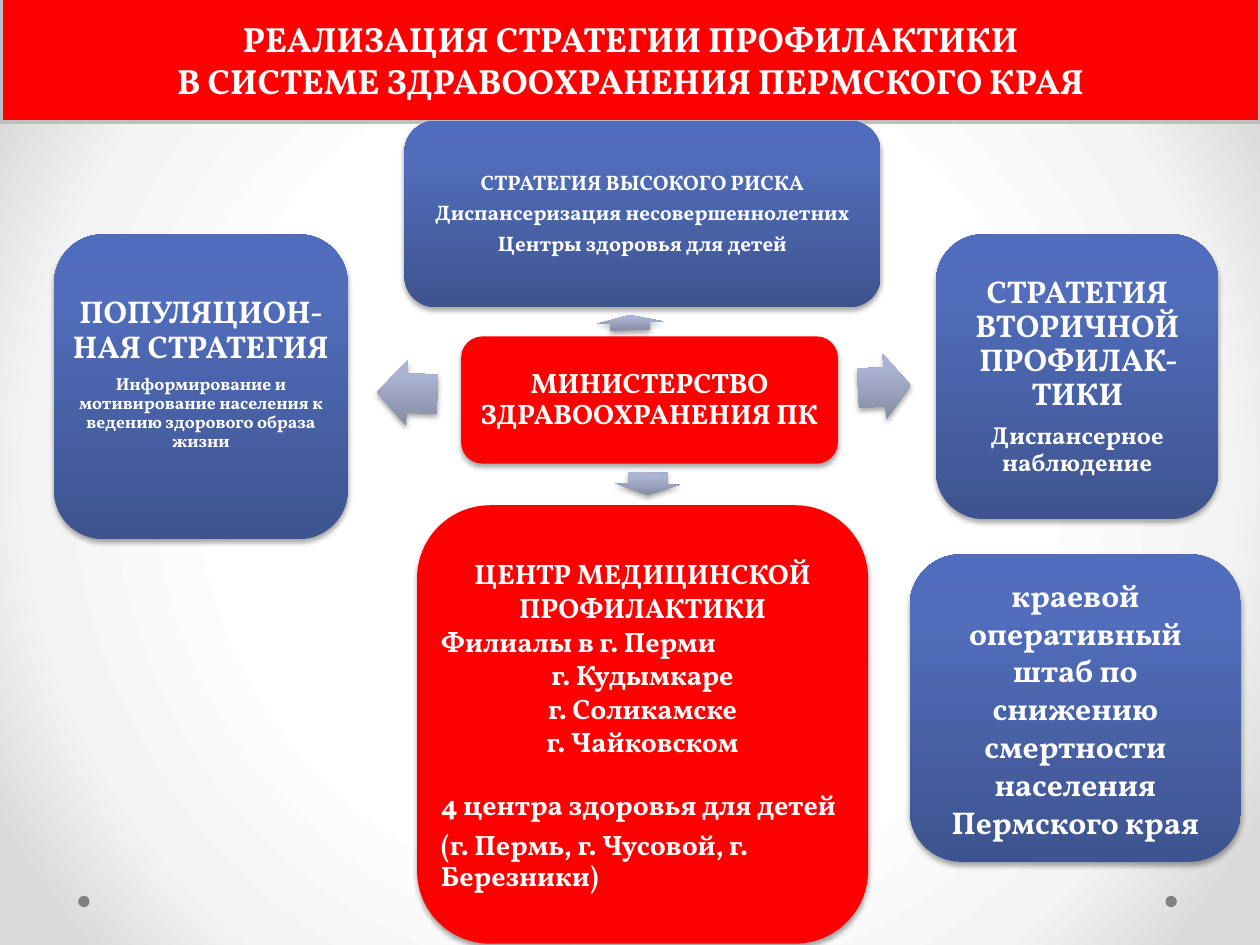
from dataclasses import dataclass

import lxml.etree
import pptx
import pptx.dml.color
import pptx.enum.shapes
import pptx.enum.text
import pptx.oxml
import pptx.oxml.ns
import pptx.util

RGBColor = pptx.dml.color.RGBColor
SHAPE = pptx.enum.shapes.MSO_SHAPE
ALIGN = pptx.enum.text.PP_ALIGN
qn = pptx.oxml.ns.qn

RED = RGBColor(0xFF, 0x00, 0x00)
WHITE = RGBColor(0xFF, 0xFF, 0xFF)
SILVER = RGBColor(0xBF, 0xBF, 0xBF)
GREY = RGBColor(0x80, 0x80, 0x80)
BLACK = RGBColor(0x00, 0x00, 0x00)
BLUES = ((0, RGBColor(0x3E, 0x54, 0x90)), (80, RGBColor(0x51, 0x6D, 0xBB)),
         (100, RGBColor(0x4F, 0x6C, 0xBE)))
STEELS = ((0, RGBColor(0x85, 0x8B, 0xA3)), (80, RGBColor(0xAC, 0xB4, 0xD4)),
          (100, RGBColor(0xAC, 0xB5, 0xD6)))
BACKDROP = ((50, WHITE), (76, RGBColor(0xF4, 0xF4, 0xF4)),
            (92, RGBColor(0xDA, 0xDA, 0xDA)))

FONT = "Vollkorn"
COLS, ROWS = 100, 75
WIDTH, HEIGHT = pptx.util.Inches(10), pptx.util.Inches(7.5)
A_NS = 'xmlns:a="http://schemas.openxmlformats.org/drawingml/2006/main"'
UPWARD = '<a:lin ang="16200000" scaled="0"/>'
RADIAL = ('<a:path path="circle"><a:fillToRect l="50000" t="50000" '
          'r="50000" b="50000"/></a:path>')


@dataclass(frozen=True)
class Box:
    col: float
    row: float
    cols: float
    rows: float


@dataclass(frozen=True)
class Line:
    text: str
    size: float
    tight: bool = True
    align: ALIGN = ALIGN.CENTER
    before: float = 0


@dataclass(frozen=True)
class Card:
    box: Box
    fill: RGBColor | tuple
    lines: tuple[Line, ...]
    insets: tuple[float, float, float, float] = (0.2, 0.2, 0.2, 0.2)


@dataclass(frozen=True)
class Arrow:
    box: Box
    rotation: float


LEFT = ALIGN.LEFT
TITLE = (
    Line("РЕАЛИЗАЦИЯ СТРАТЕГИИ ПРОФИЛАКТИКИ", 20, False),
    Line("В СИСТЕМЕ ЗДРАВООХРАНЕНИЯ ПЕРМСКОГО КРАЯ", 20, False),
)
CARDS = (
    Card(Box(36.6, 26.7, 29.9, 10.1), RED,
         (Line("МИНИСТЕРСТВО ЗДРАВООХРАНЕНИЯ ПК", 16),)),
    Card(Box(32.1, 9.6, 37.8, 14.8), BLUES, (
        Line("СТРАТЕГИЯ ВЫСОКОГО РИСКА", 12),
        Line("Диспансеризация несовершеннолетних", 12),
        Line("Центры здоровья для детей", 12))),
    Card(Box(74.3, 18.6, 22.4, 22.6), BLUES, (
        Line("СТРАТЕГИЯ ВТОРИЧНОЙ ПРОФИЛАК-ТИКИ", 18),
        Line("Диспансерное наблюдение", 14)), (0.3, 0.3, 0.3, 0.3)),
    Card(Box(33.1, 40.1, 35.8, 34.8), RED, (
        Line("ЦЕНТР МЕДИЦИНСКОЙ ПРОФИЛАКТИКИ", 16, False),
        Line("Филиалы в г. Перми", 16, False, LEFT),
        Line("г. Кудымкаре", 16, False),
        Line("г. Соликамске", 16, False),
        Line("г. Чайковском", 16, False),
        Line("4 центра здоровья для детей", 16, True, LEFT, 19),
        Line("(г. Пермь, г. Чусовой, г. Березники)", 16, True, LEFT))),
    Card(Box(4.3, 18.6, 23.3, 24.2), BLUES, (
        Line("ПОПУЛЯЦИОН-НАЯ СТРАТЕГИЯ", 18),
        Line("Информирование и мотивирование населения "
             "к ведению здорового образа жизни", 10)), (0.3, 0.3, 0.3, 2.3)),
    Card(Box(72.2, 44, 26.3, 24.4), BLUES, (
        Line("краевой оперативный штаб по снижению смертности "
             "населения Пермского края", 18, False),), (1, 0.5, 1, 0.5)),
)
ARROWS = (
    Arrow(Box(49.4, 23, 1.2, 5.2), 267.9),
    Arrow(Box(68.1, 28.1, 4.2, 5.2), 356.9),
    Arrow(Box(50.5, 35.8, 1.8, 5.2), 91.2),
    Arrow(Box(29.9, 28.6, 4.8, 5.2), 181.7),
)
DOTS = tuple(Box(col, 71.1, 0.9, 0.9) for col in (6.2, 92.5))


def x(cols: float) -> int:
    return round(WIDTH * cols / COLS)


def y(rows: float) -> int:
    return round(HEIGHT * rows / ROWS)


def set_gradient(props, stops: tuple, direction: str) -> None:
    marks = "".join(
        f'<a:gs pos="{pos * 1000}"><a:srgbClr val="{color}"/></a:gs>'
        for pos, color in stops)
    grad = pptx.oxml.parse_xml(
        f'<a:gradFill {A_NS} rotWithShape="0"><a:gsLst>{marks}</a:gsLst>'
        f'{direction}</a:gradFill>')
    props.replace(props.find(qn("a:solidFill")), grad)


def add_block(s, kind: SHAPE, box: Box, fill: RGBColor | tuple):
    sp = s.shapes.add_shape(kind, x(box.col), y(box.row), x(box.cols), y(box.rows))
    sp.shadow.inherit = False
    sp.line.fill.background()
    sp.fill.solid()
    if isinstance(fill, RGBColor):
        sp.fill.fore_color.rgb = fill
    else:
        set_gradient(sp.element.spPr, fill, UPWARD)
    return sp


def add_shadow(sp) -> None:
    effects = sp.element.spPr.find(qn("a:effectLst"))
    shadow = lxml.etree.SubElement(
        effects, qn("a:outerShdw"), blurRad=str(pptx.util.Pt(3.1)),
        dist=str(pptx.util.Pt(1.8)), dir="5400000", rotWithShape="0")
    color = lxml.etree.SubElement(shadow, qn("a:srgbClr"), val=str(BLACK))
    lxml.etree.SubElement(color, qn("a:alpha"), val="35000")


def write_lines(sp, lines: tuple[Line, ...]) -> None:
    tf = sp.text_frame
    tf.word_wrap = True
    tf.vertical_anchor = pptx.enum.text.MSO_ANCHOR.MIDDLE
    for i, line in enumerate(lines):
        p = tf.add_paragraph() if i else tf.paragraphs[0]
        p.text = line.text
        p.alignment = line.align
        p.font.name = FONT
        p.font.size = pptx.util.Pt(line.size)
        p.font.bold = True
        p.font.color.rgb = WHITE
        p.space_before = pptx.util.Pt(line.before)
        if line.tight:
            p.line_spacing = 0.9
            p.space_after = pptx.util.Pt(0.35 * line.size)


def add_card(s, card: Card) -> None:
    sp = add_block(s, SHAPE.ROUNDED_RECTANGLE, card.box, card.fill)
    add_shadow(sp)
    write_lines(sp, card.lines)
    left, top, right, bottom = card.insets
    tf = sp.text_frame
    tf.margin_left, tf.margin_right = x(left), x(right)
    tf.margin_top, tf.margin_bottom = y(top), y(bottom)


def add_arrow(s, arrow: Arrow) -> None:
    sp = add_block(s, SHAPE.RIGHT_ARROW, arrow.box, STEELS)
    add_shadow(sp)
    sp.adjustments[0], sp.adjustments[1] = 0.6, 0.5
    sp.rotation = arrow.rotation


def main() -> None:
    prs = pptx.Presentation()
    prs.slide_width, prs.slide_height = WIDTH, HEIGHT
    s = prs.slides.add_slide(prs.slide_layouts[6])
    s.background.fill.solid()
    set_gradient(s.element.find(".//" + qn("p:bgPr")), BACKDROP, RADIAL)

    for dot in DOTS:
        add_block(s, SHAPE.OVAL, dot, GREY)
    title = add_block(s, SHAPE.RECTANGLE, Box(0.1, -0.3, 99.9, 10), RED)
    title.line.color.rgb = SILVER
    title.line.width = pptx.util.Pt(2.25)
    write_lines(title, TITLE)
    for arrow in ARROWS:
        add_arrow(s, arrow)
    for card in CARDS:
        add_card(s, card)
    prs.save("out.pptx")


if __name__ == "__main__":
    main()
